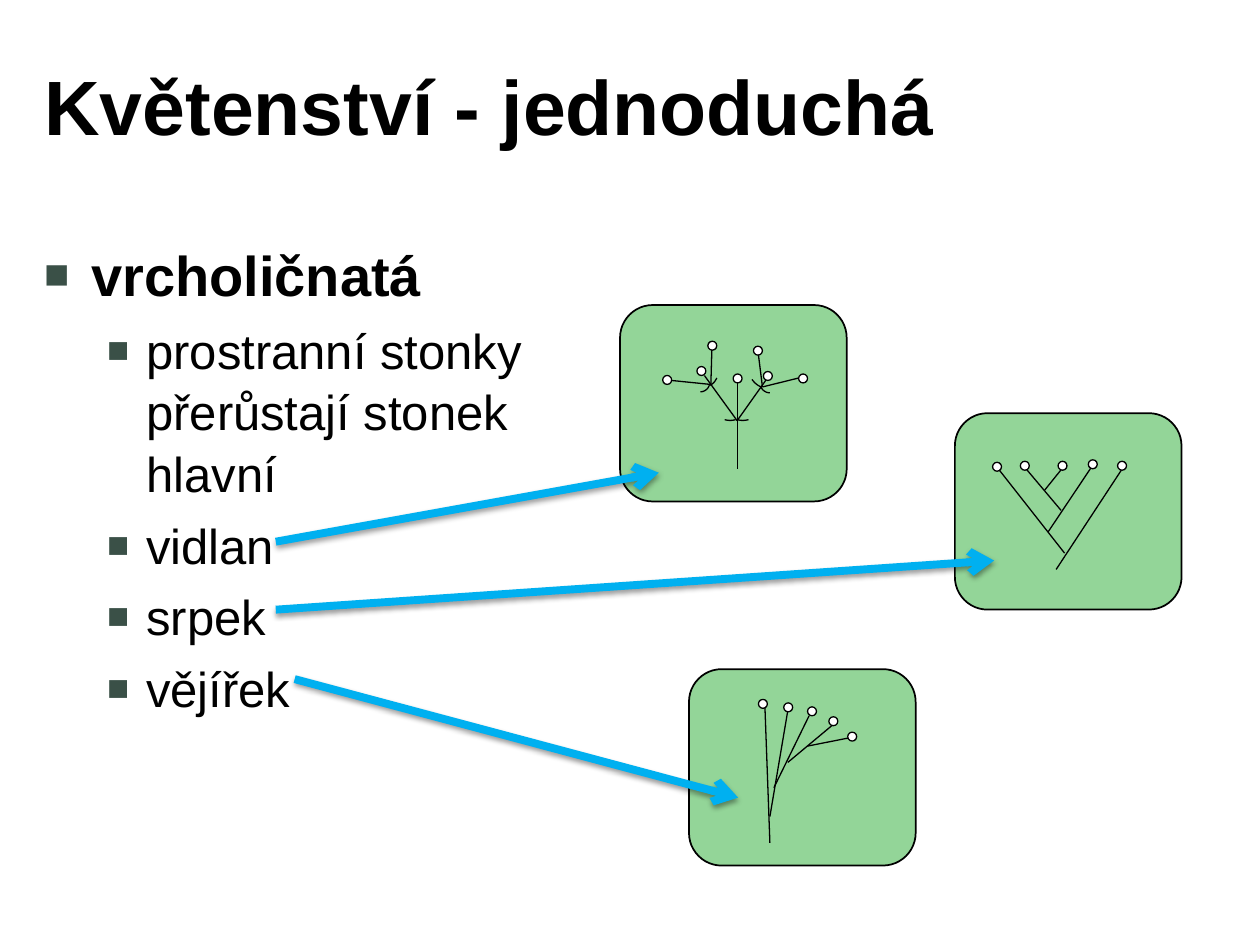
from dataclasses import dataclass, field

from lxml.etree import SubElement
from pptx import Presentation
from pptx.dml.color import RGBColor
from pptx.enum.shapes import MSO_CONNECTOR as Line, MSO_SHAPE as Preset
from pptx.enum.text import MSO_ANCHOR as Anchor, PP_ALIGN as Align
from pptx.oxml.ns import qn
from pptx.util import Cm, Pt

COLORS = {"text": "000000", "bullet": "3A5047", "card": "93D598",
          "bud": "FFFFFF", "stem": "000000", "arrow": "00B0F0"}
FONT = "Arial"
CARD_WIDTH, CARD_HEIGHT = 4.57, 3.96
BUD_SIZE = 0.18
Point = tuple[float, float]


@dataclass
class Inflorescence:
    """One card with its diagram; all positions in cm on the slide."""
    corner: Point
    stems: list[tuple[Point, Point]]
    buds: list[Point]
    bracts: list[tuple[Point, Point, Point, Point]] = field(default_factory=list)


@dataclass
class Item:
    text: str
    size: int
    left: float
    hanging: float
    bold: bool = False
    level: int = 0


VIDLAN = Inflorescence(
    corner=(12.5, 6.15),
    stems=[((14.86, 7.7), (14.86, 9.45)), ((16.1, 7.62), (15.37, 7.8)),
           ((14.2, 7.57), (14.86, 8.48)), ((15.47, 7.62), (14.86, 8.48)),
           ((15.29, 7.16), (15.37, 7.8)), ((14.35, 7.06), (14.33, 7.75)),
           ((14.33, 7.75), (13.54, 7.67))],
    buds=[(13.45, 7.66), (14.14, 7.48), (14.36, 6.97), (14.87, 7.63),
          (15.28, 7.07), (15.48, 7.58), (16.19, 7.63)],
    bracts=[((14.83, 8.46), (14.76, 8.48), (14.68, 8.48), (14.61, 8.46)),
            ((15.09, 8.46), (15.01, 8.48), (14.94, 8.48), (14.86, 8.46)),
            ((15.34, 7.8), (15.27, 7.77), (15.21, 7.72), (15.16, 7.65)),
            ((15.52, 7.92), (15.44, 7.92), (15.37, 7.87), (15.34, 7.8)),
            ((14.3, 7.77), (14.27, 7.85), (14.2, 7.9), (14.12, 7.9)),
            ((14.45, 7.62), (14.43, 7.67), (14.38, 7.75), (14.3, 7.77))])
SRPEK = Inflorescence(
    corner=(19.25, 8.33),
    stems=[((21.29, 11.48), (22.61, 9.47)), ((21.46, 11.15), (20.14, 9.47)),
           ((21.13, 10.72), (22, 9.42)), ((21.39, 10.29), (20.7, 9.47)),
           ((21.06, 9.88), (21.39, 9.47))],
    buds=[(20.1, 9.41), (20.66, 9.39), (21.42, 9.39), (22.03, 9.36), (22.62, 9.39)])
VEJIREK = Inflorescence(
    corner=(13.89, 13.49),
    stems=[((15.52, 16.99), (15.42, 14.25)), ((15.52, 16.46), (15.88, 14.33)),
           ((15.6, 15.88), (16.31, 14.43)), ((15.88, 15.37), (16.79, 14.61)),
           ((16.28, 15.04), (17.09, 14.88))],
    buds=[(15.38, 14.19), (15.89, 14.26), (16.37, 14.34), (16.8, 14.54),
          (17.18, 14.85)])

ITEMS = [Item("vrcholičnatá", 32, 0.95, 0.95, bold=True)] + [
    Item(text, 28, 2.06, 0.79, level=1)
    for text in ("prostranní stonky přerůstají stonek hlavní",
                 "vidlan", "srpek", "vějířek")]

ARROWS = [((5.56, 10.92), (13.28, 9.53)),
          ((5.94, 13.69), (14.88, 16.08)),
          ((5.56, 12.29), (20.04, 11.3))]


def rgb(key: str) -> RGBColor:
    return RGBColor.from_string(COLORS[key])


def add_run(paragraph, text: str, size: int, bold: bool) -> None:
    run = paragraph.add_run()
    run.text = text
    run.font.name, run.font.size, run.font.bold = FONT, Pt(size), bold
    run.font.color.rgb = rgb("text")


def add_item(paragraph, item: Item, first: bool) -> None:
    paragraph.level = item.level
    paragraph.line_spacing = 1.05
    paragraph.space_before = Pt(0 if first else item.size * 0.2)
    props = paragraph._p.get_or_add_pPr()
    props.set("marL", str(Cm(item.left)))
    props.set("indent", str(-Cm(item.hanging)))
    SubElement(SubElement(props, qn("a:buClr")), qn("a:srgbClr"), val=COLORS["bullet"])
    SubElement(props, qn("a:buSzPct"), val="75000")
    SubElement(props, qn("a:buFont"), typeface=FONT)
    SubElement(props, qn("a:buChar"), char="■")
    add_run(paragraph, item.text, item.size, item.bold)


def add_line(shapes, start: Point, end: Point, color: str, width: float):
    line = shapes.add_connector(Line.STRAIGHT, *(Cm(v) for v in (*start, *end)))
    line.line.color.rgb, line.line.width = rgb(color), Pt(width)
    effects = SubElement(line._element.spPr, qn("a:effectLst"))
    return line, effects


def add_preset(shapes, preset, box: tuple, color: str, width: float) -> None:
    shape = shapes.add_shape(preset, *(Cm(v) for v in box))
    shape.shadow.inherit = False
    shape.fill.solid()
    shape.fill.fore_color.rgb = rgb(color)
    shape.line.color.rgb, shape.line.width = rgb("stem"), Pt(width)


def add_bract(shapes, controls: tuple, steps: int = 8) -> None:
    """Draw a cubic curve through short segments."""
    def at(t: float) -> Point:
        weights = ((1 - t) ** 3, 3 * t * (1 - t) ** 2, 3 * t * t * (1 - t), t ** 3)
        return tuple(Cm(sum(w * p[axis] for w, p in zip(weights, controls)))
                     for axis in (0, 1))

    builder = shapes.build_freeform(*at(0))
    builder.add_line_segments([at(i / steps) for i in range(1, steps + 1)], close=False)
    bract = builder.convert_to_shape()
    bract.shadow.inherit = False
    bract.fill.background()
    bract.line.color.rgb, bract.line.width = rgb("stem"), Pt(0.75)


def add_inflorescence(slide, plant: Inflorescence) -> None:
    shapes = slide.shapes.add_group_shape().shapes
    add_preset(shapes, Preset.ROUNDED_RECTANGLE,
               (*plant.corner, CARD_WIDTH, CARD_HEIGHT), "card", 1)
    for start, end in plant.stems:
        add_line(shapes, start, end, "stem", 0.75)
    for controls in plant.bracts:
        add_bract(shapes, controls)
    for x, y in plant.buds:
        add_preset(shapes, Preset.FLOWCHART_CONNECTOR,
                   (x - BUD_SIZE / 2, y - BUD_SIZE / 2, BUD_SIZE, BUD_SIZE), "bud", 0.75)


def add_arrow(slide, start: Point, end: Point) -> None:
    arrow, effects = add_line(slide.shapes, start, end, "arrow", 4.5)
    SubElement(arrow.line._get_or_add_ln(), qn("a:tailEnd"), type="arrow")
    shadow = SubElement(effects, qn("a:outerShdw"), blurRad=str(Pt(3.1)),
                        dist=str(Pt(1.6)), dir="5400000", rotWithShape="0")
    black = SubElement(shadow, qn("a:srgbClr"), val="000000")
    SubElement(black, qn("a:alpha"), val="38000")


def main() -> None:
    deck = Presentation()
    deck.slide_width, deck.slide_height = Cm(25.4), Cm(19.05)
    slide = deck.slides.add_slide(deck.slide_layouts[5])

    # Title
    title = slide.shapes.title
    title.left, title.top, title.width, title.height = Cm(0.64), Cm(0.43), Cm(24.13), Cm(3.38)
    title.text_frame.vertical_anchor = Anchor.MIDDLE
    heading = title.text_frame.paragraphs[0]
    heading.alignment = Align.LEFT
    add_run(heading, "Květenství - jednoduchá", 44, True)

    # Bulleted list
    body = slide.shapes.add_textbox(Cm(0.64), Cm(4.65), Cm(10.67), Cm(13.97)).text_frame
    body.word_wrap = True
    for index, item in enumerate(ITEMS):
        paragraph = body.add_paragraph() if index else body.paragraphs[0]
        add_item(paragraph, item, first=index == 0)

    # Diagrams and the arrows leading to them
    for plant in (VIDLAN, SRPEK, VEJIREK):
        add_inflorescence(slide, plant)
    for start, end in ARROWS:
        add_arrow(slide, start, end)

    deck.save("out.pptx")


if __name__ == "__main__":
    main()
